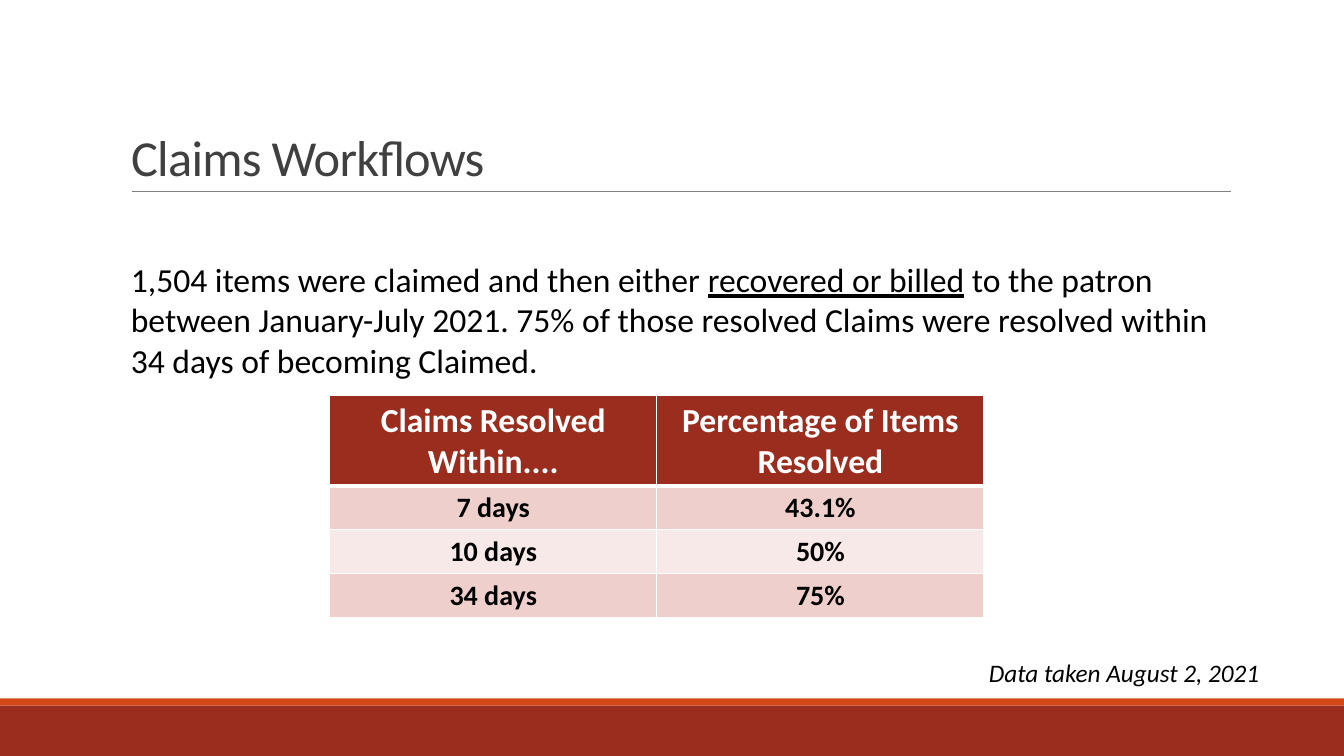
"""Build the Claims Workflows slide."""
from lxml import etree
from pptx import Presentation
from pptx.dml.color import RGBColor
from pptx.enum.shapes import MSO_CONNECTOR, MSO_SHAPE
from pptx.enum.text import MSO_ANCHOR, MSO_AUTO_SIZE, PP_ALIGN
from pptx.oxml.ns import qn
from pptx.util import Inches, Pt

LEFT, CENTER = PP_ALIGN.LEFT, PP_ALIGN.CENTER
BOTTOM = MSO_ANCHOR.BOTTOM
NO_FIT = MSO_AUTO_SIZE.NONE
RECT = MSO_SHAPE.RECTANGLE
STRAIGHT = MSO_CONNECTOR.STRAIGHT

BRICK, WHITE = "9B2D1F", "FFFFFF"
BANDS = ("EFCFCC", "F7E9E8")
ROWS = (
    ("Claims Resolved Within....", "Percentage of Items Resolved"),
    ("7 days", "43.1%"),
    ("10 days", "50%"),
    ("34 days", "75%"),
)


def color(code):
    """Turn a hex string into a colour."""
    return RGBColor.from_string(code)


def box(*sides):
    """Turn numbers into lengths in inches."""
    return [Inches(side) for side in sides]


def write(para, text, size=24, ink="000000", bold=False, italic=False,
          under=False, align=LEFT, track=None):
    """Add a formatted run to a paragraph."""
    para.alignment = align
    run = para.add_run()
    run.text = text
    font = run.font
    font.name, font.size = "Calibri", Pt(size)
    font.bold, font.italic, font.underline = bold, italic, under
    font.color.rgb = color(ink)
    if track is not None:
        font._element.set("spc", str(int(track * 100)))


def edge(cell, side, width):
    """Draw one white border of a cell."""
    props = cell._tc.get_or_add_tcPr()
    line = etree.SubElement(props, qn("a:" + side), w=str(Pt(width)))
    fill = etree.SubElement(line, qn("a:solidFill"))
    etree.SubElement(fill, qn("a:srgbClr"), val=WHITE)


class Page:
    """Hold the slide and draw its elements."""

    def __init__(self, deck):
        """Start a slide with a title."""
        self.slide = deck.slides.add_slide(deck.slide_layouts[5])
        self.shapes = self.slide.shapes

    def bar(self, place, fill):
        """Draw a plain band."""
        shape = self.shapes.add_shape(RECT, *box(*place))
        shape.shadow.inherit = False
        shape.fill.solid()
        shape.fill.fore_color.rgb = color(fill)
        shape.line.fill.background()

    def rule(self, ends, ink, width):
        """Draw a thin line."""
        line = self.shapes.add_connector(STRAIGHT, *box(*ends))
        line.line.color.rgb = color(ink)
        line.line.width = Pt(width)
        etree.SubElement(line._element.spPr, qn("a:effectLst"))

    def title(self, place, text):
        """Place and fill the title."""
        shape = self.shapes.title
        shape.left, shape.top, shape.width, shape.height = box(*place)
        frame = shape.text_frame
        frame.auto_size, frame.word_wrap = NO_FIT, True
        frame.vertical_anchor = BOTTOM
        para = frame.paragraphs[0]
        para.line_spacing = 0.85
        write(para, text, size=36, ink="404040", track=-0.5)

    def text(self, place, *runs):
        """Add a text box made of (text, format) runs."""
        frame = self.shapes.add_textbox(*box(*place)).text_frame
        frame.word_wrap = True
        for words, style in runs:
            write(frame.paragraphs[0], words, **style)

    def table(self, place, rows, tall):
        """Add a banded table with a tall header row."""
        grid = self.shapes.add_table(
            len(rows), len(rows[0]), *box(*place)).table
        for i, row in enumerate(rows):
            head = i == 0
            if head:
                grid.rows[i].height = Inches(tall)
            else:
                grid.rows[i].height = Inches((place[3] - tall) / (len(rows) - 1))
            for j, words in enumerate(row):
                cell = grid.cell(i, j)
                for side in ("lnL", "lnR", "lnT", "lnB"):
                    thick = (head and side == "lnB") or (i == 1 and side == "lnT")
                    edge(cell, side, 3 if thick else 1)
                cell.fill.solid()
                cell.fill.fore_color.rgb = color(
                    BRICK if head else BANDS[(i - 1) % 2])
                write(cell.text_frame.paragraphs[0], words, bold=True,
                      size=24 if head else 20,
                      ink=WHITE if head else "000000", align=CENTER)


def main():
    """Build and save the deck."""
    deck = Presentation()
    deck.slide_width, deck.slide_height = box(13.33, 7.5)
    page = Page(deck)
    page.bar((0, 7, 13.33, 0.5), BRICK)
    page.bar((0, 6.93, 13.33, 0.07), "D34817")
    page.rule((1.31, 1.9, 12.21, 1.9), "808080", 0.5)
    page.title((1.2, 0.31, 11, 1.59), "Claims Workflows")
    page.text(
        (1.2, 2.52, 11.16, 2.32),
        ("1,504 items were claimed and then either ", {}),
        ("recovered or billed", {"under": True}),
        (" to the patron between January-July 2021. 75% of those resolved "
         "Claims were resolved within 34 days of becoming Claimed.", {}))
    page.table((3.27, 3.92, 6.49, 2.2), ROWS, 0.9)
    page.text((9.71, 6.47, 3, 0.4),
              ("Data taken August 2, 2021", {"size": 18, "italic": True}))
    deck.save("out.pptx")


if __name__ == "__main__":
    main()
